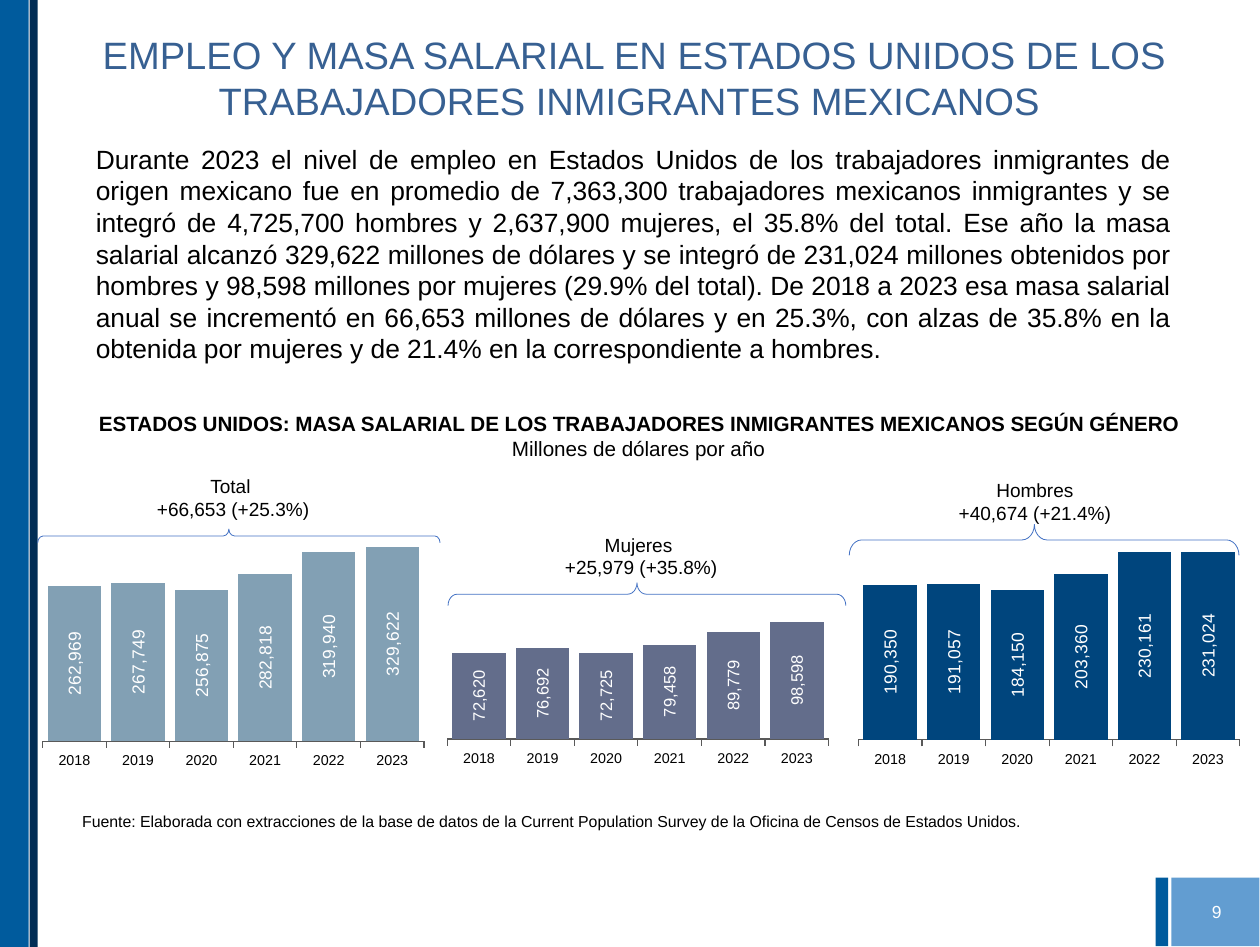
from dataclasses import dataclass

from lxml import etree
from pptx import Presentation
from pptx.chart.data import CategoryChartData as Data
from pptx.dml.color import RGBColor as Rgb
from pptx.enum.chart import XL_CHART_TYPE as Kind
from pptx.enum.chart import XL_LABEL_POSITION as Spot
from pptx.enum.chart import XL_TICK_LABEL_POSITION as Ticks
from pptx.enum.chart import XL_TICK_MARK as Mark
from pptx.enum.shapes import MSO_SHAPE as Form
from pptx.enum.text import MSO_ANCHOR as Anchor
from pptx.enum.text import PP_ALIGN as Align
from pptx.oxml import parse_xml
from pptx.oxml.ns import nsdecls, qn
from pptx.util import Inches, Pt


@dataclass(frozen=True)
class Theme:
    font: str = "Arial"
    ink: str = "000000"
    white: str = "FFFFFF"
    title: str = "376092"
    navy: str = "012D55"
    blue: str = "005B9D"
    sky: str = "629DD1"
    brace: str = "4472C4"
    axis: str = "595959"
    head: float = 24
    body: float = 16.6
    sub: float = 13
    label: float = 12
    page: float = 11
    note: float = 10
    tick: float = 9


T = Theme()

# Grid of columns and rows, ten to the inch
COLS, ROWS = 110.24, 82.87

TITLE = (" EMPLEO Y MASA SALARIAL EN ESTADOS UNIDOS DE LOS "
         "TRABAJADORES INMIGRANTES MEXICANOS")
BODY = (
    "Durante 2023 el nivel de empleo en Estados Unidos de los trabajadores "
    "inmigrantes de origen mexicano fue en promedio de 7,363,300 trabajadores "
    "mexicanos inmigrantes y se integró de 4,725,700 hombres y 2,637,900 "
    "mujeres, el 35.8% del total. Ese año la masa salarial alcanzó 329,622 "
    "millones de dólares y se integró de 231,024 millones obtenidos por hombres "
    "y 98,598 millones por mujeres (29.9% del total). De 2018 a 2023 esa masa "
    "salarial anual se incrementó en 66,653 millones de dólares y en 25.3%, con "
    "alzas de 35.8% en la obtenida por mujeres y de 21.4% en la correspondiente "
    "a hombres."
)
SUB = ("ESTADOS UNIDOS: MASA SALARIAL DE LOS TRABAJADORES INMIGRANTES "
       "MEXICANOS SEGÚN GÉNERO")
UNIT = "Millones de dólares por año"
NOTE = ("Fuente: Elaborada con extracciones de la base de datos de la Current "
        "Population Survey de la Oficina de Censos de Estados Unidos.")
YEARS = [str(year) for year in range(2018, 2024)]

# Bars of the frame: left, top, width, height, colour
BARS = [
    ((102.5, 76.8, 7.7, 6), T.sky),
    ((101.1, 76.8, 1.1, 6), T.blue),
    ((2.6, 0, 0.7, ROWS), T.navy),
    ((0, 0, 2.5, ROWS), T.blue),
]

# "plot" is in percent of the chart, the other boxes are on the grid
PANELS = [
    dict(name="Hombres", gain="+40,674 (+21.4%)", color="00457D",
         vals=[190350, 191057, 184150, 203360, 230161, 231024],
         top=250000, size=11, chart=(74.2, 46.5, 36, 21.9),
         plot=(2.5, 2, 92.7, 81.3),
         brace=(74.3, 45.9, 34.1, 2.7), text=(82.7, 41.1, 15.7, 5.6)),
    dict(name="Mujeres ", gain="+25,979 (+35.8%)", color="636D8B",
         vals=[72620, 76692, 72725, 79458, 89779, 98598],
         top=120000, size=10.5, chart=(37.8, 48.8, 36, 18.3),
         plot=(3.7, 18.8, 92.7, 68.8),
         brace=(39.2, 51, 34.8, 2), text=(47.4, 45.3, 17.4, 6.7)),
    dict(name="Total ", gain="+66,653 (+25.3%)", color="82A0B4",
         vals=[262969, 267749, 256875, 282818, 319940, 329622],
         top=350000, size=11, chart=(2.4, 43.8, 36, 23.5),
         plot=(3.7, 12.8, 92.7, 77),
         brace=(3.3, 46.3, 35.2, 1.2), text=(11.8, 40.3, 17.2, 6.4)),
]


def grid(box):
    return [Inches(cell / 10) for cell in box]


def style(font, size, color=T.ink, bold=False):
    font.name, font.size, font.bold = T.font, Pt(size), bold
    font.color.rgb = Rgb.from_string(color)


def write(slide, box, lines, size, color=T.ink, align=Align.CENTER,
          anchor=Anchor.MIDDLE, wrap=True):
    """Add a text box; lines holds pairs of text and bold."""
    frame = slide.shapes.add_textbox(*grid(box)).text_frame
    frame.word_wrap, frame.vertical_anchor = wrap, anchor
    for i, (text, bold) in enumerate(lines):
        para = frame.add_paragraph() if i else frame.paragraphs[0]
        para.alignment = align
        run = para.add_run()
        run.text = text
        style(run.font, size, color, bold)


def add_bar(slide, box, color):
    bar = slide.shapes.add_shape(Form.RECTANGLE, *grid(box))
    bar.shadow.inherit = False
    bar.fill.solid()
    bar.fill.fore_color.rgb = Rgb.from_string(color)
    bar.line.fill.background()


def add_brace(slide, box):
    """Lay a left brace on its side so that it fills the box."""
    x, y, wide, high = box
    turned = (x + (wide - high) / 2, y + (high - wide) / 2, high, wide)
    brace = slide.shapes.add_shape(Form.LEFT_BRACE, *grid(turned))
    brace.rotation = 90
    brace.adjustments[0], brace.adjustments[1] = 40.3 / 100, 52.5 / 100
    brace.shadow.inherit = False
    brace.fill.background()
    brace.line.color.rgb = Rgb.from_string(T.brace)
    brace.line.width = Pt(0.5)


def set_plot(chart, shares):
    """Fix the inner plot area, given in percent of the chart."""
    area = chart.plots[0]._element.getparent()
    for old in area.findall(qn("c:layout")):
        area.remove(old)
    layout = parse_xml(f"<c:layout {nsdecls('c')}><c:manualLayout/></c:layout>")
    parts = [("layoutTarget", "inner"), ("xMode", "edge"), ("yMode", "edge")]
    parts += [(tag, share / 100) for tag, share in zip("xywh", shares)]
    for tag, val in parts:
        etree.SubElement(layout[0], qn(f"c:{tag}")).set("val", str(val))
    area.insert(0, layout)


def add_bars(slide, panel):
    data = Data(number_format="#,##0")
    data.categories = YEARS
    data.add_series("Series 1", panel["vals"])
    chart = slide.shapes.add_chart(
        Kind.COLUMN_CLUSTERED, *grid(panel["chart"]), data).chart
    chart.has_legend = chart.has_title = False
    style(chart.font, T.note)
    set_plot(chart, panel["plot"])

    years, scale = chart.category_axis, chart.value_axis
    style(years.tick_labels.font, T.tick)
    years.major_tick_mark = Mark.OUTSIDE
    years.format.line.color.rgb = Rgb.from_string(T.axis)
    years.format.line.width = Pt(0.75)
    years.has_major_gridlines = scale.has_major_gridlines = False
    scale.minimum_scale, scale.maximum_scale = 0, panel["top"]
    scale.major_tick_mark = Mark.NONE
    scale.tick_label_position = Ticks.NONE
    scale.format.line.fill.background()

    plot = chart.plots[0]
    plot.vary_by_categories = False
    plot.gap_width, plot.overlap = 19, -27
    fill = plot.series[0].format.fill
    fill.solid()
    fill.fore_color.rgb = Rgb.from_string(panel["color"])
    tags = plot.series[0].data_labels
    tags.show_value, tags.position = True, Spot.CENTER
    style(tags.font, panel["size"], T.white)
    turn = tags._element.find(".//" + qn("a:bodyPr"))
    turn.set("rot", "-5400000")
    turn.set("vert", "horz")


def main():
    deck = Presentation()
    deck.slide_width, deck.slide_height = grid((COLS, ROWS))
    slide = deck.slides.add_slide(deck.slide_layouts[6])
    for box, color in BARS:
        add_bar(slide, box, color)
    write(slide, (6.8, 2.3, 96.5, 10.3), [(TITLE, False)], T.head, T.title,
          anchor=Anchor.TOP)
    write(slide, (7.4, 12, 95.92, 21.5), [(BODY, False)], T.body,
          align=Align.JUSTIFY, anchor=Anchor.TOP)
    write(slide, (103.1, 77.6, 6.7, 4.4), [("9", False)], T.page, T.white)
    write(slide, (4.5, 35, 102.7, 6.2), [(SUB, True), (UNIT, False)], T.sub,
          wrap=False)
    for panel in PANELS:
        add_bars(slide, panel)
        add_brace(slide, panel["brace"])
        write(slide, panel["text"],
              [(panel["name"], False), (panel["gain"], False)], T.label,
              wrap=False)
    write(slide, (6.2, 69.7, 96.5, 4.4), [(NOTE, False)], T.note,
          align=Align.LEFT)
    deck.save("out.pptx")


if __name__ == "__main__":
    main()
